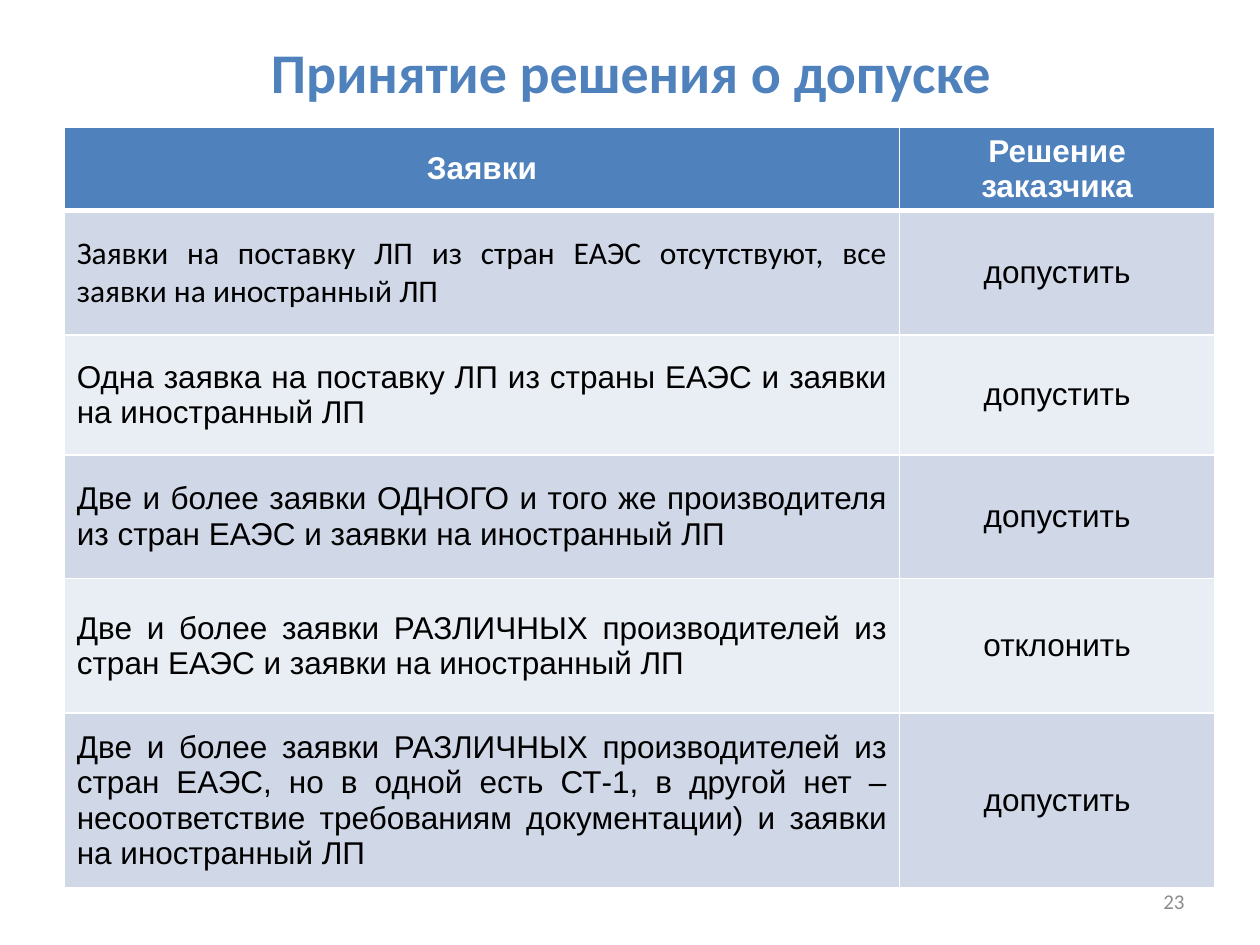
from dataclasses import dataclass

from lxml import etree
from pptx import Presentation
from pptx.dml.color import RGBColor
from pptx.enum.text import MSO_ANCHOR, PP_ALIGN
from pptx.oxml.ns import qn
from pptx.util import Pt

LEFT, CENTER, RIGHT, JUSTIFY = PP_ALIGN.LEFT, PP_ALIGN.CENTER, PP_ALIGN.RIGHT, PP_ALIGN.JUSTIFY
MIDDLE = MSO_ANCHOR.MIDDLE


@dataclass(frozen=True)
class Theme:
    """Colours, fonts and type sizes of the slide."""
    accent: str = "4F81BD"
    bands: tuple = ("D0D8E8", "E9EDF4")
    white: str = "FFFFFF"
    black: str = "000000"
    grey: str = "8C8C8C"
    heading_font: str = "Calibri"
    table_font: str = "Arial"
    title_size: int = 32
    table_size: int = 18
    number_size: int = 12


THEME = Theme()
TITLE_BOX = (36.7, 20.9, 648, 39.6)
TABLE_BOX = (36.7, 72.7, 657.4, 430)
NUMBER_BOX = (516.2, 500.4, 167.8, 28.8)
COLUMN_WIDTHS = (477.4, 180)
ROW_HEIGHTS = (43.2, 71.3, 68.4, 70.6, 77, 100)
HEADINGS = ("Заявки", "Решение заказчика")
DECISIONS = (
    ("Заявки на поставку ЛП из стран ЕАЭС отсутствуют, все заявки на иностранный ЛП", "допустить"),
    ("Одна заявка на поставку ЛП из страны ЕАЭС и заявки на иностранный ЛП", "допустить"),
    ("Две и более заявки ОДНОГО и того же производителя из стран ЕАЭС "
     "и заявки на иностранный ЛП", "допустить"),
    ("Две и более заявки РАЗЛИЧНЫХ производителей из стран ЕАЭС "
     "и заявки на иностранный ЛП", "отклонить"),
    ("Две и более заявки РАЗЛИЧНЫХ производителей из стран ЕАЭС, но в одной есть СТ-1, "
     "в другой нет – несоответствие требованиям документации) и заявки на иностранный ЛП",
     "допустить"),
)


def write(frame, text, font_name, size, color, align, bold=False):
    """Put one formatted paragraph into a text frame."""
    frame.text = text
    frame.word_wrap = True
    paragraph = frame.paragraphs[0]
    paragraph.alignment = align
    font = paragraph.runs[0].font
    font.name, font.size, font.bold = font_name, Pt(size), bold
    font.color.rgb = RGBColor.from_string(color)


def set_borders(cell, bottom_width):
    """Draw white borders on the four sides of a cell."""
    properties = cell._tc.get_or_add_tcPr()
    widths = {"a:lnL": 1, "a:lnR": 1, "a:lnT": 1, "a:lnB": bottom_width}
    for position, (side, width) in enumerate(widths.items()):
        line = etree.Element(qn(side), w=str(Pt(width)))
        fill = etree.SubElement(line, qn("a:solidFill"))
        etree.SubElement(fill, qn("a:srgbClr"), val=THEME.white)
        properties.insert(position, line)


def add_title(slide, box):
    """Place the slide title in its box."""
    title = slide.shapes.title
    title.left, title.top, title.width, title.height = map(Pt, box)
    write(title.text_frame, "Принятие решения о допуске", THEME.heading_font,
          THEME.title_size, THEME.accent, CENTER, bold=True)
    title.text_frame.vertical_anchor = MIDDLE


def add_decision_table(slide, box):
    """Place the table of bids and customer decisions in its box."""
    rows = (HEADINGS, *DECISIONS)
    table = slide.shapes.add_table(len(rows), len(HEADINGS), *map(Pt, box)).table
    for column, width in zip(table.columns, COLUMN_WIDTHS):
        column.width = Pt(width)
    for row_index, (texts, height) in enumerate(zip(rows, ROW_HEIGHTS)):
        table.rows[row_index].height = Pt(height)
        is_header = row_index == 0
        fill = THEME.accent if is_header else THEME.bands[(row_index - 1) % 2]
        color = THEME.white if is_header else THEME.black
        for column_index, text in enumerate(texts):
            cell = table.cell(row_index, column_index)
            is_bid = column_index == 0 and not is_header
            font_name = THEME.heading_font if is_bid and row_index == 1 else THEME.table_font
            write(cell.text_frame, text, font_name, THEME.table_size, color,
                  JUSTIFY if is_bid else CENTER, bold=is_header)
            cell.vertical_anchor = MIDDLE
            cell.fill.solid()
            cell.fill.fore_color.rgb = RGBColor.from_string(fill)
            set_borders(cell, 3 if is_header else 1)


def add_page_number(slide, box):
    """Place the page number in its box."""
    frame = slide.shapes.add_textbox(*map(Pt, box)).text_frame
    write(frame, "23", THEME.heading_font, THEME.number_size, THEME.grey, RIGHT)
    frame.vertical_anchor = MIDDLE


def main():
    """Build and save the slide."""
    deck = Presentation()
    deck.slide_width, deck.slide_height = Pt(720), Pt(540)
    slide = deck.slides.add_slide(deck.slide_layouts.get_by_name("Title Only"))
    add_title(slide, TITLE_BOX)
    add_decision_table(slide, TABLE_BOX)
    add_page_number(slide, NUMBER_BOX)
    deck.save("out.pptx")


if __name__ == "__main__":
    main()
